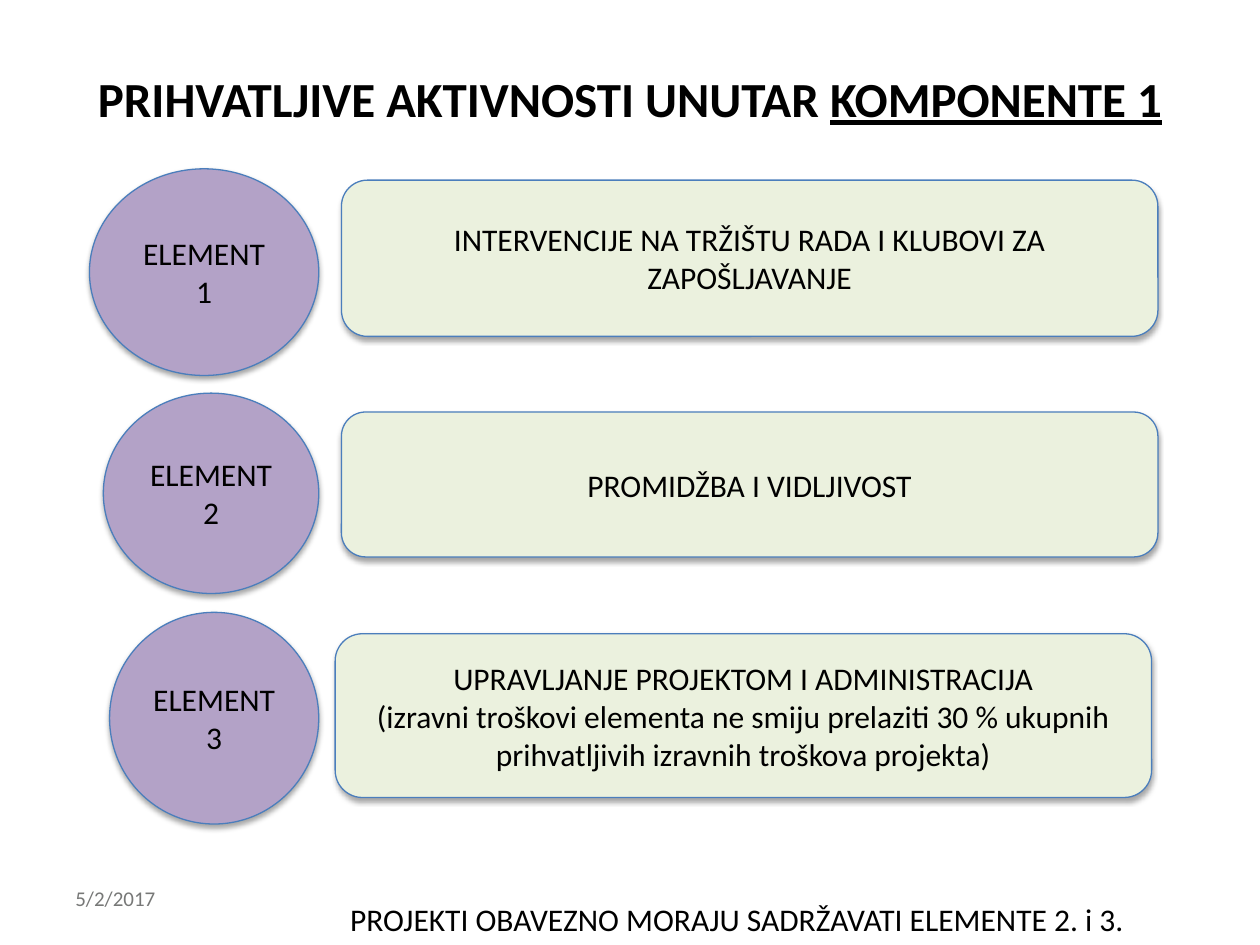
"""Build the slide on eligible activities within Component 1."""
from lxml import etree
from pptx import Presentation
from pptx.dml.color import RGBColor
from pptx.enum import shapes, text
from pptx.oxml import ns
from pptx.util import Inches, Pt

BLACK = RGBColor(0x00, 0x00, 0x00)
GREY = RGBColor(0x77, 0x78, 0x77)
PURPLE = RGBColor(0xB3, 0xA2, 0xC7)
GREEN = RGBColor(0xEB, 0xF1, 0xDE)
BLUE = RGBColor(0x4B, 0x7E, 0xBC)

TITLE = [[("PRIHVATLJIVE AKTIVNOSTI UNUTAR ", False), ("KOMPONENTE 1", True)]]
DATE = "5/2/2017"
REQUIREMENT = "PROJEKTI OBAVEZNO MORAJU SADRŽAVATI ELEMENTE 2. i 3."
ELEMENTS = [
    ("ELEMENT 1", (0.71, 1.34, 1.82, 1.64),
     ["INTERVENCIJE NA TRŽIŠTU RADA I KLUBOVI ZA ZAPOŠLJAVANJE"],
     (2.71, 1.43, 6.48, 1.24)),
    ("ELEMENT 2", (0.82, 3.12, 1.71, 1.59),
     ["PROMIDŽBA I VIDLJIVOST"],
     (2.71, 3.27, 6.48, 1.15)),
    ("ELEMENT 3", (0.87, 4.86, 1.66, 1.68),
     ["UPRAVLJANJE PROJEKTOM I ADMINISTRACIJA",
      "(izravni troškovi elementa ne smiju prelaziti 30 % ukupnih "
      "prihvatljivih izravnih troškova projekta)"],
     (2.66, 5.03, 6.48, 1.3)),
]
SHADOW = (
    f'<a:effectLst {ns.nsdecls("a")}>'
    '<a:outerShdw blurRad="39370" dist="22860" dir="5400000" rotWithShape="0">'
    '<a:srgbClr val="000000"><a:alpha val="35000"/></a:srgbClr>'
    '</a:outerShdw></a:effectLst>'
)


def write(holder, paragraphs, size=18, color=BLACK, bold=False,
          align=text.PP_ALIGN.CENTER, anchor=text.MSO_ANCHOR.MIDDLE):
    frame = holder.text_frame
    frame.word_wrap = True
    frame.vertical_anchor = anchor
    for index, runs in enumerate(paragraphs):
        paragraph = frame.paragraphs[0] if index == 0 else frame.add_paragraph()
        paragraph.alignment = align
        for words, underline in runs:
            run = paragraph.add_run()
            run.text = words
            run.font.name = "Calibri"
            run.font.size = Pt(size)
            run.font.bold = bold
            run.font.underline = underline
            run.font.color.rgb = color


def add_label(slide, box, paragraphs, **style):
    write(slide.shapes.add_textbox(*map(Inches, box)), paragraphs, **style)


def add_panel(slide, preset, box, fill, lines):
    panel = slide.shapes.add_shape(preset, *map(Inches, box))
    panel.fill.solid()
    panel.fill.fore_color.rgb = fill
    panel.line.color.rgb = BLUE
    panel.line.width = Pt(0.75)
    panel.element.spPr.append(etree.fromstring(SHADOW))
    write(panel, [[(line, False)] for line in lines])


def main():
    deck = Presentation()
    deck.slide_width, deck.slide_height = Inches(10), Inches(7.5)
    slide = deck.slides.add_slide(deck.slide_layouts[6])
    left_top = {"align": text.PP_ALIGN.LEFT, "anchor": text.MSO_ANCHOR.TOP}

    add_label(slide, (0.5, 6.98, 2.33, 0.4), [[(DATE, False)]],
              size=12, color=GREY, **left_top)
    add_label(slide, (0.5, 0.35, 9, 0.86), TITLE, size=28, bold=True)
    for name, circle, activity, bar in ELEMENTS:
        add_panel(slide, shapes.MSO_SHAPE.OVAL, circle, PURPLE, [name])
        add_panel(slide, shapes.MSO_SHAPE.ROUNDED_RECTANGLE, bar, GREEN, activity)
    add_label(slide, (2.68, 7.09, 6.43, 0.4), [[(REQUIREMENT, False)]], **left_top)

    deck.save("out.pptx")


if __name__ == "__main__":
    main()
